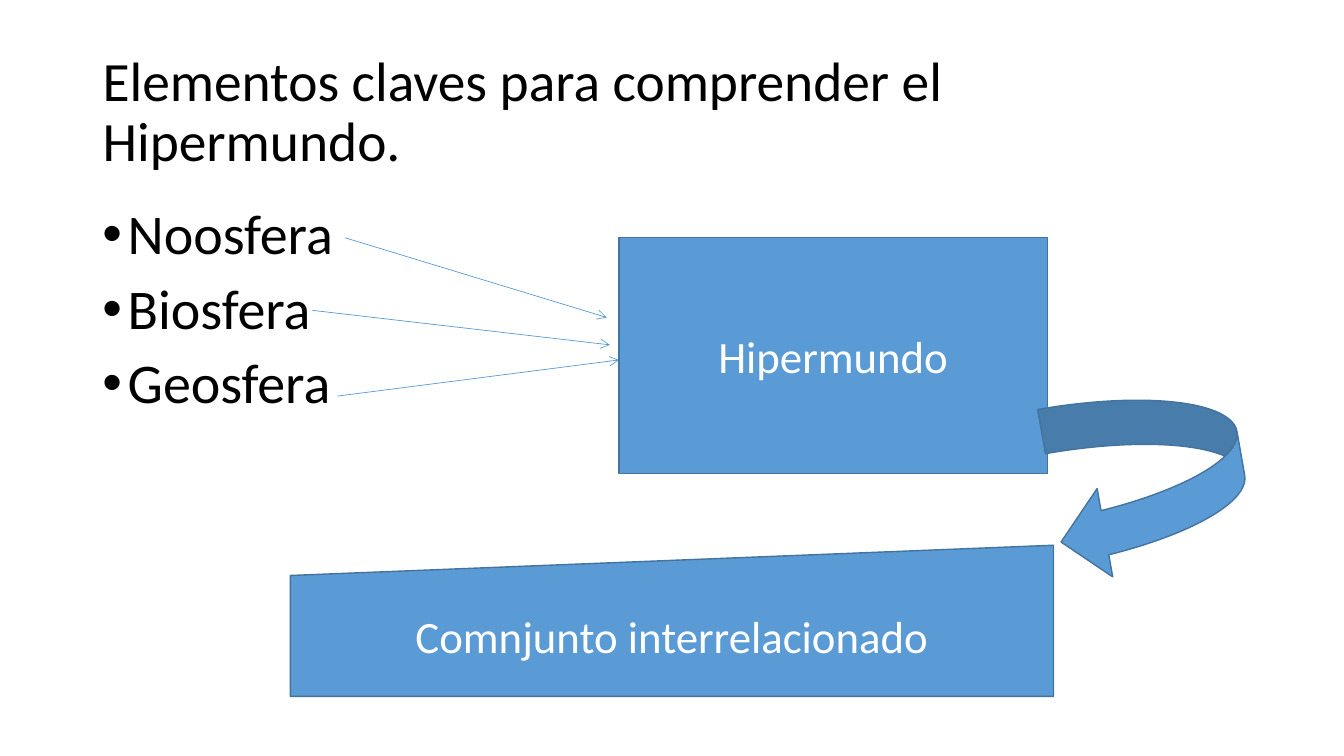
"""Builds the slide on the key elements of the Hipermundo."""
from lxml import etree
from pptx import Presentation
from pptx.dml.color import RGBColor
from pptx.enum.shapes import MSO_CONNECTOR, MSO_SHAPE
from pptx.enum.text import MSO_ANCHOR, MSO_AUTO_SIZE, PP_ALIGN
from pptx.oxml.ns import qn
from pptx.util import Cm, Pt

STRAIGHT = MSO_CONNECTOR.STRAIGHT
RECTANGLE = MSO_SHAPE.RECTANGLE
CURVED_ARROW = MSO_SHAPE.CURVED_DOWN_ARROW
MANUAL_INPUT = MSO_SHAPE.FLOWCHART_MANUAL_INPUT
TOP, MIDDLE = MSO_ANCHOR.TOP, MSO_ANCHOR.MIDDLE
NO_FIT = MSO_AUTO_SIZE.NONE
LEFT, CENTER = PP_ALIGN.LEFT, PP_ALIGN.CENTER
TITLE_ONLY = 5


def color(value):
    """Turn a hex string into a colour."""
    return RGBColor.from_string(value)


def write(para, text, size, ink, align=LEFT, spacing=None, before=0):
    """Put formatted text into a paragraph."""
    para.alignment = align
    para.line_spacing = spacing
    para.space_before = Pt(before)
    span = para.add_run()
    span.text = text
    span.font.name = "Calibri"
    span.font.size = Pt(size)
    span.font.color.rgb = color(ink)


class Page:
    """Holds the style and the current slide."""

    ink, paper, blue, edge = "000000", "FFFFFF", "5B9BD5", "43739E"

    def __init__(self, deck):
        """Add a title-only slide to the deck."""
        self.slide = deck.slides.add_slide(deck.slide_layouts[TITLE_ONLY])
        self.shapes = self.slide.shapes

    def frame(self, box, anchor):
        """Prepare the text frame of a box."""
        frame = box.text_frame
        frame.word_wrap = True
        frame.auto_size = NO_FIT
        frame.vertical_anchor = anchor
        return frame

    def title(self, text, left, top, width, height):
        """Place and fill the title."""
        box = self.shapes.title
        box.left, box.top = Cm(left), Cm(top)
        box.width, box.height = Cm(width), Cm(height)
        para = self.frame(box, MIDDLE).paragraphs[0]
        write(para, text, 39.6, self.ink, spacing=0.9)

    def bullets(self, items, left, top, width, height):
        """Add a bulleted list."""
        box = self.shapes.add_textbox(Cm(left), Cm(top), Cm(width), Cm(height))
        frame = self.frame(box, TOP)
        for index, item in enumerate(items):
            para = frame.add_paragraph() if index else frame.paragraphs[0]
            write(para, item, 40, self.ink, spacing=0.9, before=10)
            indent = Cm(0.64)
            properties = para._p.get_or_add_pPr()
            properties.set("marL", str(indent))
            properties.set("indent", str(-indent))
            etree.SubElement(properties, qn("a:buFont")).set("typeface", "Arial")
            etree.SubElement(properties, qn("a:buChar")).set("char", "•")

    def arrow(self, start, end):
        """Draw a thin arrow between two points."""
        line = self.shapes.add_connector(STRAIGHT, *map(Cm, start + end))
        line.line.color.rgb = color(self.blue)
        line.line.width = Pt(0.5)
        outline = line.line._get_or_add_ln()
        etree.SubElement(outline, qn("a:tailEnd")).set("type", "arrow")
        etree.SubElement(line._element.spPr, qn("a:effectLst"))

    def block(self, kind, left, top, width, height, text="", rotation=0):
        """Add a filled shape with an optional label."""
        shape = self.shapes.add_shape(kind, Cm(left), Cm(top), Cm(width), Cm(height))
        shape.shadow.inherit = False
        shape.rotation = rotation
        shape.fill.solid()
        shape.fill.fore_color.rgb = color(self.blue)
        shape.line.color.rgb = color(self.edge)
        shape.line.width = Pt(1)
        if text:
            para = self.frame(shape, MIDDLE).paragraphs[0]
            write(para, text, 32, self.paper, align=CENTER)


def main():
    """Build and save the deck."""
    deck = Presentation()
    deck.slide_width, deck.slide_height = Cm(33.87), Cm(19.05)
    page = Page(deck)
    page.title("Elementos claves para comprender el Hipermundo.", 2.33, 1.02, 29.21, 3.68)
    page.bullets(["Noosfera", "Biosfera", "Geosfera"], 2.33, 5.08, 29.21, 12.09)
    for start, end in (
        ((8.69, 5.99), (15.29, 8.0)),
        ((7.87, 7.82), (15.37, 8.69)),
        ((8.51, 9.98), (15.6, 9.07)),
    ):
        page.arrow(start, end)
    page.block(RECTANGLE, 15.6, 5.99, 10.8, 5.94, "Hipermundo")
    page.block(CURVED_ARROW, 26.67, 9.7, 4.52, 4.85, rotation=80)
    page.block(MANUAL_INPUT, 7.32, 13.74, 19.23, 3.81, "Comnjunto interrelacionado")
    deck.save("out.pptx")


main()
